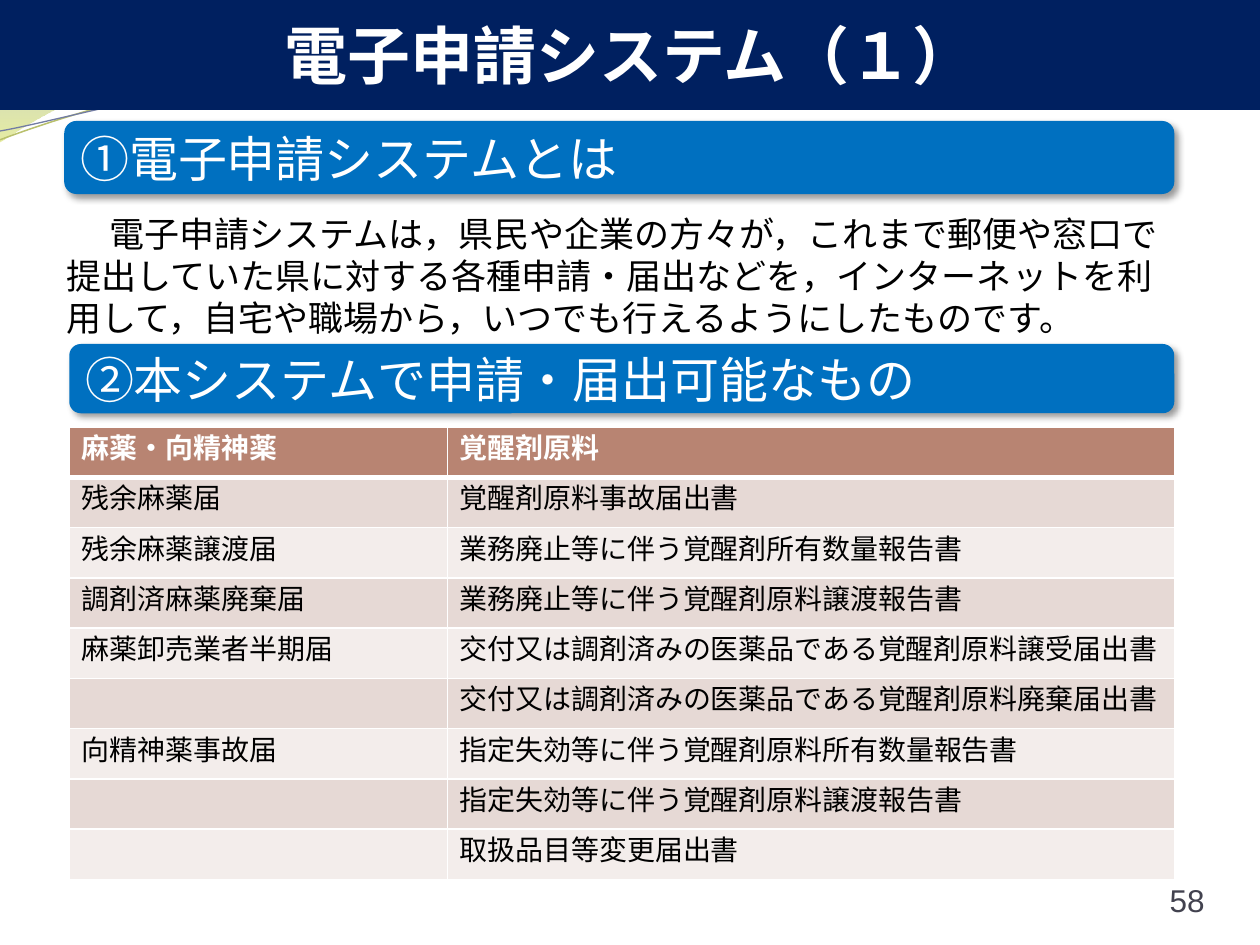
from dataclasses import dataclass

from lxml import etree
from pptx import Presentation
from pptx import util as u
from pptx.dml.color import RGBColor
from pptx.enum import shapes, text
from pptx.oxml import ns

Inches, Pt = u.Inches, u.Pt


@dataclass(frozen=True)
class Theme:
    font: str = "Arial"
    navy: str = "002060"
    blue: str = "0070C0"
    white: str = "FFFFFF"
    black: str = "000000"
    grey: str = "42424F"
    header: str = "B88472"
    bands: tuple = ("E6D9D5", "F3EDEB")
    wide_wave: tuple = ((0, "72889B", 45), (100, "D3DE57", 55))
    right_wave: tuple = ((0, "A4AC50", 30), (80, "84A3BD", 45))
    olive: str = "B9C06C"
    violet: str = "727CA3"
    title: int = 36
    heading: int = 28
    body: int = 20
    number: int = 18
    cell: int = 16


T = Theme()

ROWS = [
    ("麻薬・向精神薬", "覚醒剤原料"),
    ("残余麻薬届", "覚醒剤原料事故届出書"),
    ("残余麻薬譲渡届", "業務廃止等に伴う覚醒剤所有数量報告書"),
    ("調剤済麻薬廃棄届", "業務廃止等に伴う覚醒剤原料譲渡報告書"),
    ("麻薬卸売業者半期届", "交付又は調剤済みの医薬品である覚醒剤原料譲受届出書"),
    ("", "交付又は調剤済みの医薬品である覚醒剤原料廃棄届出書"),
    ("向精神薬事故届", "指定失効等に伴う覚醒剤原料所有数量報告書"),
    ("", "指定失効等に伴う覚醒剤原料譲渡報告書"),
    ("", "取扱品目等変更届出書"),
]

WIDE_WAVE = [
    [(0, -0.01)], [(4.4, -0.01)],
    [(4.76, 0.17), (6.64, 0.63), (7.58, 0.63)],
    [(8.53, 0.63), (9.58, 0.26), (10, 0.09)], [(10.01, 0.36)],
    [(9.83, 0.44), (8.7, 0.76), (7.46, 0.75)],
    [(6.22, 0.75), (3.82, 0.28), (2.57, 0.34)],
    [(1.29, 0.35), (0.46, 0.83), (-0.01, 1.13)],
]
RIGHT_WAVE = [
    [(4.79, -0.01)],
    [(5.09, 0.11), (6.82, 0.62), (7.69, 0.65)],
    [(8.56, 0.69), (9.61, 0.32), (10, 0.21)], [(10, 0)],
]
OLIVE_CURVE = [
    [(0, 1.11)],
    [(0.48, 0.93), (1.58, 0.57), (2.77, 0.52)],
    [(3.95, 0.47), (5.93, 0.89), (7.13, 0.8)],
    [(8.33, 0.71), (9.38, 0.15), (9.98, -0.02)],
]
VIOLET_CURVE = [
    [(0, 1.04)],
    [(0.47, 0.96), (1.64, 0.61), (2.83, 0.56)],
    [(4.03, 0.51), (5.97, 0.83), (7.17, 0.75)],
    [(8.36, 0.67), (9.41, 0.21), (10, 0.06)],
]


def rgb(color):
    return RGBColor.from_string(color)


def add_xml(parent, tag, **attrs):
    return etree.SubElement(parent, ns.qn(tag), {k: str(v) for k, v in attrs.items()})


def box_lengths(box):
    return [Inches(v) for v in box]


def write(tf, words, size, color, bold=False, align=text.PP_ALIGN.LEFT,
          anchor=text.MSO_ANCHOR.TOP, wrap=True, indent=0):
    tf.word_wrap = wrap
    tf.vertical_anchor = anchor
    p = tf.paragraphs[0]
    p.alignment = align
    if indent:
        p._p.get_or_add_pPr().set("indent", str(Inches(indent)))
    if not words:
        end = add_xml(p._p, "a:endParaRPr", sz=size * 100)
        for script in ("latin", "ea"):
            add_xml(end, f"a:{script}", typeface=T.font)
        return
    r = p.add_run()
    r.text = words
    r.font.name, r.font.size, r.font.bold = T.font, Pt(size), bold
    r.font.color.rgb = rgb(color)
    add_xml(r._r.get_or_add_rPr(), "a:ea", typeface=T.font)


def outline(s, pieces, close):
    pts = [(Inches(x), Inches(y)) for piece in pieces for x, y in piece]
    builder = s.shapes.build_freeform(*pts[0])
    builder.add_line_segments(pts[1:], close=close)
    sp = builder.convert_to_shape()
    sp.shadow.inherit = False
    lines = iter(list(sp.element.iter(ns.qn("a:lnTo"))))
    for piece in pieces[1:]:
        steps = [next(lines) for _ in piece]
        if len(steps) == 3:
            curve = etree.Element(ns.qn("a:cubicBezTo"))
            steps[0].addprevious(curve)
            for step in steps:
                curve.append(step[0])
                step.getparent().remove(step)
    return sp


def add_waves(s):
    for pieces, stops in ((WIDE_WAVE, T.wide_wave), (RIGHT_WAVE, T.right_wave)):
        sp = outline(s, pieces, True)
        sp.line.fill.background()
        sp.fill.gradient()
        sp.fill.gradient_angle = 270
        marks = list(sp.element.iter(ns.qn("a:gs")))
        for stop, mark, (pos, color, alpha) in zip(sp.fill.gradient_stops, marks, stops):
            stop.color.rgb = rgb(color)
            mark.set("pos", str(pos * 1000))
            add_xml(mark[0], "a:alpha", val=alpha * 1000)
    for pieces, color, width in ((OLIVE_CURVE, T.olive, 0.85),
                                 (VIOLET_CURVE, T.violet, 0.75)):
        sp = outline(s, pieces, False)
        sp.fill.background()
        sp.line.color.rgb = rgb(color)
        sp.line.width = Pt(width)


def add_title(s, box, words):
    sp = s.shapes.title
    sp.left, sp.top, sp.width, sp.height = box_lengths(box)
    sp.fill.solid()
    sp.fill.fore_color.rgb = sp.line.color.rgb = rgb(T.navy)
    sp.line.width = Pt(2)
    sp.text_frame.auto_size = text.MSO_AUTO_SIZE.NONE
    write(sp.text_frame, words, T.title, T.white, bold=True,
          align=text.PP_ALIGN.CENTER, anchor=text.MSO_ANCHOR.MIDDLE)
    sp.element.getparent().append(sp.element)


def add_heading(s, box, words):
    sp = s.shapes.add_shape(shapes.MSO_SHAPE.ROUNDED_RECTANGLE, *box_lengths(box))
    sp.adjustments[0] = 0.167
    sp.fill.solid()
    sp.fill.fore_color.rgb = rgb(T.blue)
    sp.line.fill.background()
    sp.shadow.inherit = False
    effects = sp.element.spPr.find(ns.qn("a:effectLst"))
    shadow = add_xml(effects, "a:outerShdw", blurRad=Pt(4), dist=Pt(3),
                     dir=45 * 60000, algn="tl", rotWithShape=0)
    add_xml(add_xml(shadow, "a:srgbClr", val=T.black), "a:alpha", val=40000)
    write(sp.text_frame, words, T.heading, T.white,
          anchor=text.MSO_ANCHOR.MIDDLE, wrap=False)


def add_body(s, box, words):
    tf = s.shapes.add_textbox(*box_lengths(box)).text_frame
    tf.auto_size = text.MSO_AUTO_SIZE.SHAPE_TO_FIT_TEXT
    write(tf, words, T.body, T.black, indent=0.34)


def add_page_number(s, box, words):
    tf = s.shapes.add_textbox(*box_lengths(box)).text_frame
    tf.margin_left = tf.margin_top = tf.margin_right = tf.margin_bottom = 0
    write(tf, words, T.number, T.grey, align=text.PP_ALIGN.RIGHT,
          anchor=text.MSO_ANCHOR.BOTTOM)


def format_cell(cell, fill, top, bottom):
    tcPr = cell._tc.get_or_add_tcPr()
    for side, width in (("L", 1), ("R", 1), ("T", top), ("B", bottom)):
        ln = add_xml(tcPr, f"a:ln{side}", w=Pt(width))
        add_xml(add_xml(ln, "a:solidFill"), "a:srgbClr", val=T.white)
    cell.fill.solid()
    cell.fill.fore_color.rgb = rgb(fill)


def add_form_table(s, box, rows, widths):
    table = s.shapes.add_table(len(rows), len(widths), *box_lengths(box)).table
    for column, width in zip(table.columns, widths):
        column.width = Inches(width)
    for i, row in enumerate(rows):
        table.rows[i].height = Inches(box[3] / len(rows))
        head = i == 0
        for j, words in enumerate(row):
            cell = table.cell(i, j)
            format_cell(cell, T.header if head else T.bands[(i - 1) % 2],
                        3 if i == 1 else 1, 3 if head else 1)
            write(cell.text_frame, words, T.cell, T.white if head else T.black, bold=head)


def main():
    prs = Presentation()
    prs.slide_width, prs.slide_height = Inches(10), Inches(7.5)
    s = prs.slides.add_slide(prs.slide_layouts[5])
    add_waves(s)
    add_page_number(s, (8.73, 6.89, 0.83, 0.4), "58")
    add_heading(s, (0.51, 0.96, 8.81, 0.58), "①電子申請システムとは")
    add_heading(s, (0.55, 2.73, 8.77, 0.55), "②本システムで申請・届出可能なもの")
    add_body(s, (0.43, 1.64, 9.02, 1.11),
             "電子申請システムは，県民や企業の方々が，これまで郵便や窓口で提出していた県に対する"
             "各種申請・届出などを，インターネットを利用して，自宅や職場から，"
             "いつでも行えるようにしたものです。")
    add_title(s, (0, 0, 10, 0.86), "電子申請システム（１）")
    add_form_table(s, (0.55, 3.39, 8.77, 3.59), ROWS, (3, 5.77))
    prs.save("out.pptx")


if __name__ == "__main__":
    main()
